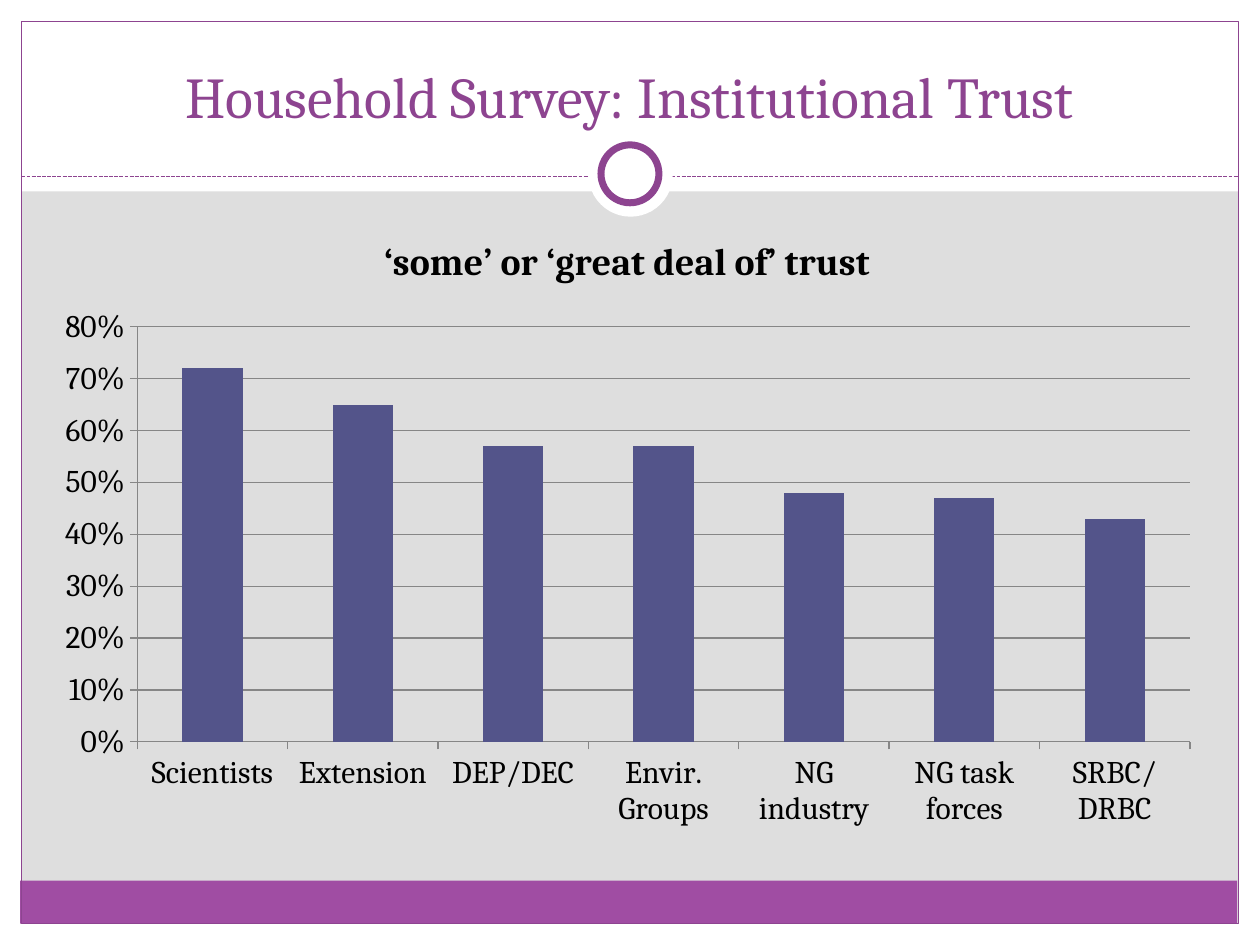
"""Build the institutional trust slide with its framed backdrop and column chart."""
from dataclasses import dataclass
from typing import Optional

from lxml.etree import SubElement
from pptx import Presentation
from pptx.chart.data import CategoryChartData
from pptx.dml.color import RGBColor
from pptx.enum.chart import XL_CHART_TYPE, XL_TICK_MARK
from pptx.enum.dml import MSO_LINE
from pptx.enum.shapes import MSO_CONNECTOR, MSO_SHAPE
from pptx.enum.text import MSO_ANCHOR, PP_ALIGN
from pptx.oxml.ns import qn
from pptx.util import Inches, Pt

WHITE = RGBColor(0xFF, 0xFF, 0xFF)
BLACK = RGBColor(0x00, 0x00, 0x00)
GRAY = RGBColor(0xDE, 0xDE, 0xDE)
GRID_GRAY = RGBColor(0x86, 0x86, 0x86)
PURPLE = RGBColor(0x8D, 0x44, 0x90)
BAND_PURPLE = RGBColor(0xA0, 0x4D, 0xA3)
INDIGO = RGBColor(0x53, 0x54, 0x8A)
FONT_NAME = "Cambria"

TRUST_TITLE = "‘some’ or ‘great deal of’ trust"
TRUST = {
    "Scientists": 0.72,
    "Extension": 0.65,
    "DEP/DEC": 0.57,
    "Envir. Groups": 0.57,
    "NG industry": 0.48,
    "NG task forces": 0.47,
    "SRBC/DRBC": 0.43,
}


@dataclass(frozen=True)
class Panel:
    left: float
    top: float
    width: float
    height: float
    fill: Optional[RGBColor] = WHITE
    line: Optional[RGBColor] = None
    line_width: float = 0.75
    preset: MSO_SHAPE = MSO_SHAPE.RECTANGLE


BACKDROP = [
    Panel(0, 7.33, 10, 0.17),
    Panel(0, 0, 10, 1.52),
    Panel(0, 0, 0.17, 7.5),
    Panel(9.83, 0, 0.17, 7.5),
    Panel(0.16, 6.99, 9.66, 0.34, fill=BAND_PURPLE),
    Panel(0.17, 0.17, 9.66, 7.16, fill=None, line=PURPLE),
]
RING = [
    Panel(4.67, 1.05, 0.67, 0.67, preset=MSO_SHAPE.OVAL),
    Panel(4.77, 1.15, 0.46, 0.46, line=PURPLE, line_width=4, preset=MSO_SHAPE.OVAL),
]


def add_panel(slide, panel: Panel) -> None:
    shape = slide.shapes.add_shape(
        panel.preset, Inches(panel.left), Inches(panel.top),
        Inches(panel.width), Inches(panel.height))
    shape.shadow.inherit = False
    if panel.fill is None:
        shape.fill.background()
    else:
        shape.fill.solid()
        shape.fill.fore_color.rgb = panel.fill
    if panel.line is None:
        shape.line.fill.background()
    else:
        shape.line.color.rgb = panel.line
        shape.line.width = Pt(panel.line_width)


def add_divider(slide) -> None:
    divider = slide.shapes.add_connector(
        MSO_CONNECTOR.STRAIGHT, Inches(0.17), Inches(1.4), Inches(9.83), Inches(1.4))
    divider.line.color.rgb = PURPLE
    divider.line.width = Pt(0.75)
    divider.line.dash_style = MSO_LINE.SQUARE_DOT
    SubElement(divider.element.spPr, qn("a:effectLst"))


def format_font(font, size: float, color: RGBColor = BLACK, bold: bool = False) -> None:
    font.name = FONT_NAME
    font.size = Pt(size)
    font.bold = bold
    font.color.rgb = color


def write_text(text_frame, text: str, size: float, color: RGBColor = BLACK,
               bold: bool = False) -> None:
    text_frame.text = text
    paragraph = text_frame.paragraphs[0]
    paragraph.alignment = PP_ALIGN.CENTER
    format_font(paragraph.runs[0].font, size, color, bold)


def place_title(slide) -> None:
    title = slide.shapes.title
    title.left, title.top = Inches(0.33), Inches(0.25)
    title.width, title.height = Inches(9.33), Inches(0.83)
    title.text_frame.vertical_anchor = MSO_ANCHOR.BOTTOM
    write_text(title.text_frame, "Household Survey: Institutional Trust", 33, color=PURPLE)
    title.element.getparent().append(title.element)


def add_trust_chart(slide) -> None:
    data = CategoryChartData(number_format="0%")
    data.categories = list(TRUST)
    data.add_series(TRUST_TITLE, list(TRUST.values()))
    chart = slide.shapes.add_chart(
        XL_CHART_TYPE.COLUMN_CLUSTERED, Inches(0.33), Inches(1.67),
        Inches(9.3), Inches(5), data).chart
    format_font(chart.font, 18)
    chart.has_legend = False
    chart.has_title = True
    write_text(chart.chart_title.text_frame, TRUST_TITLE, 21.6, bold=True)
    chart.chart_title.include_in_layout = False

    plot = chart.plots[0]
    plot.gap_width = 150
    plot.vary_by_categories = False
    series_fill = plot.series[0].format.fill
    series_fill.solid()
    series_fill.fore_color.rgb = INDIGO

    value_axis = chart.value_axis
    value_axis.minimum_scale, value_axis.maximum_scale = 0, 0.8
    value_axis.major_unit = 0.1
    value_axis.has_major_gridlines = True
    value_axis.tick_labels.number_format = "0%"
    value_axis.tick_labels.number_format_is_linked = False
    for axis in (chart.category_axis, value_axis):
        axis.major_tick_mark = XL_TICK_MARK.OUTSIDE
        format_font(axis.tick_labels.font, 18)
    for part in (chart.category_axis, value_axis, value_axis.major_gridlines):
        part.format.line.color.rgb = GRID_GRAY
        part.format.line.width = Pt(0.75)


def main() -> None:
    presentation = Presentation()
    presentation.slide_width, presentation.slide_height = Inches(10), Inches(7.5)
    slide = presentation.slides.add_slide(presentation.slide_layouts[5])
    slide.background.fill.solid()
    slide.background.fill.fore_color.rgb = GRAY
    for panel in BACKDROP:
        add_panel(slide, panel)
    add_divider(slide)
    for panel in RING:
        add_panel(slide, panel)
    place_title(slide)
    add_trust_chart(slide)
    presentation.save("out.pptx")


if __name__ == "__main__":
    main()
